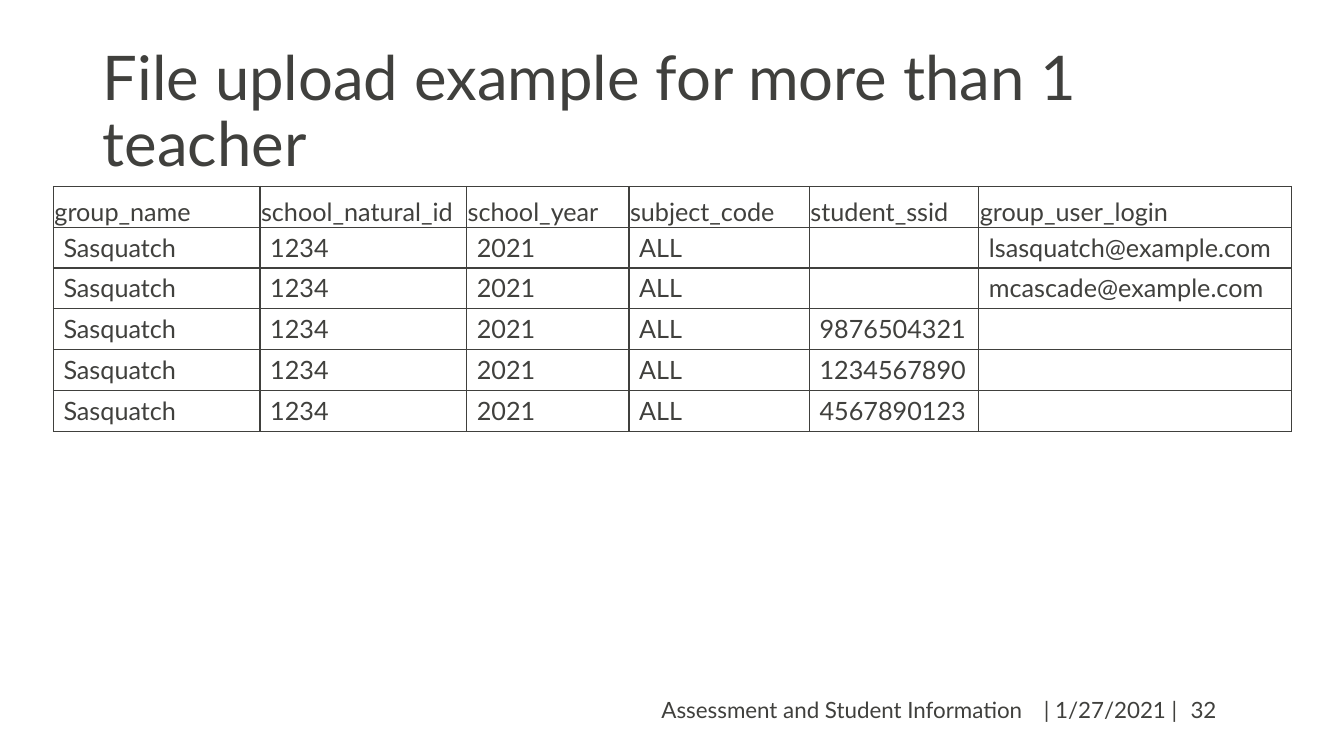
from lxml import etree
from pptx import Presentation
from pptx.dml.color import RGBColor
from pptx.enum.text import MSO_ANCHOR, PP_ALIGN
from pptx.oxml.ns import qn
from pptx.util import Inches, Pt

MIDDLE, BOTTOM = MSO_ANCHOR.MIDDLE, MSO_ANCHOR.BOTTOM
LEFT, CENTER, RIGHT = PP_ALIGN.LEFT, PP_ALIGN.CENTER, PP_ALIGN.RIGHT

HEADS = ["group_name", "school_natural_id", "school_year",
         "subject_code", "student_ssid", "group_user_login"]
USERS = [
    ("", "lsasquatch@example.com"),
    ("", "mcascade@example.com"),
    ("9876504321", ""),
    ("1234567890", ""),
    ("4567890123", ""),
]
ROWS = [HEADS] + [["Sasquatch", "1234", "2021", "ALL", *user] for user in USERS]
WIDTHS = [2.05, 2.05, 1.61, 1.79, 1.68, 3.1]


def color(code):
    return RGBColor.from_string(code)


class Deck:
    font = "Lato"
    ink = "40403D"

    def __init__(self):
        self.file = Presentation()
        self.file.slide_width = Inches(13.33)
        self.file.slide_height = Inches(7.5)
        self.slide = self.file.slides.add_slide(self.file.slide_layouts[6])

    def style(self, para, size, align=LEFT):
        para.alignment = align
        para.font.name = self.font
        para.font.size = Pt(size)
        para.font.color.rgb = color(self.ink)

    def text(self, words, left, top, width, height, size, align=LEFT, space=1.0):
        box = self.slide.shapes.add_textbox(
            Inches(left), Inches(top), Inches(width), Inches(height))
        frame = box.text_frame
        frame.word_wrap = True
        frame.vertical_anchor = MIDDLE
        para = frame.paragraphs[0]
        para.text = words
        para.line_spacing = space
        self.style(para, size, align)

    def border(self, cell, width):
        """Draw all four sides of a table cell."""
        props = cell._tc.get_or_add_tcPr()
        for place, side in enumerate(("a:lnL", "a:lnR", "a:lnT", "a:lnB")):
            line = etree.Element(qn(side), w=str(Pt(width)))
            fill = etree.SubElement(line, qn("a:solidFill"))
            etree.SubElement(fill, qn("a:srgbClr"), val=self.ink)
            props.insert(place, line)

    def table(self, rows, widths, left, top, height, size):
        grid = self.slide.shapes.add_table(
            len(rows), len(widths), Inches(left), Inches(top),
            Inches(sum(widths)), Inches(height)).table
        grid.first_row = grid.horz_banding = False
        for col, width in zip(grid.columns, widths):
            col.width = Inches(width)
        for r, row in enumerate(rows):
            for c, words in enumerate(row):
                cell = grid.cell(r, c)
                cell.text = words
                self.style(cell.text_frame.paragraphs[0], size)
                cell.fill.background()
                self.border(cell, 1)
                if r == 0:
                    cell.vertical_anchor = BOTTOM
                    cell.margin_left = cell.margin_right = Inches(0.01)
                    cell.margin_top, cell.margin_bottom = Inches(0.01), 0


def main():
    deck = Deck()
    deck.text("File upload example for more than 1 teacher",
              0.92, 0.4, 11.5, 1.45, 44, space=0.9)
    deck.table(ROWS, WIDTHS, 0.53, 1.85, 2.43, 18)
    for words, left, width, align in [
        ("| 1/27/2021 |", 10.18, 1.67, CENTER),
        ("32", 11.71, 0.7, LEFT),
        ("Assessment and Student Information", 3.88, 6.36, RIGHT),
    ]:
        deck.text(words, left, 6.84, width, 0.4, 16, align)
    deck.file.save("out.pptx")


if __name__ == "__main__":
    main()
